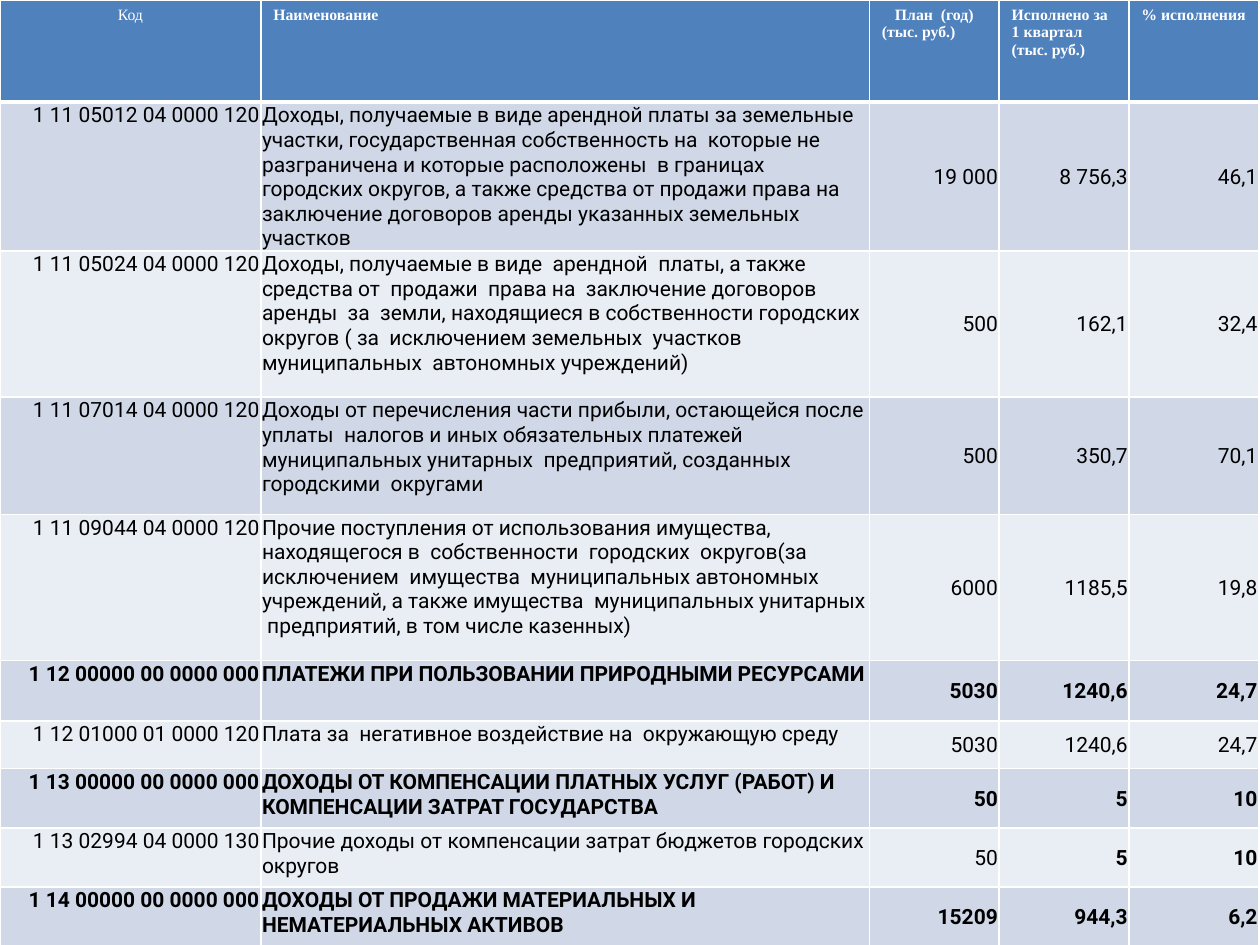
from dataclasses import dataclass

from lxml import etree
from pptx import Presentation
from pptx.dml.color import RGBColor
from pptx.enum.text import MSO_ANCHOR, PP_ALIGN
from pptx.oxml.ns import qn
from pptx.table import _Cell
from pptx.util import Inches, Pt

LEFT, CENTER, RIGHT = PP_ALIGN.LEFT, PP_ALIGN.CENTER, PP_ALIGN.RIGHT
TOP, MIDDLE = MSO_ANCHOR.TOP, MSO_ANCHOR.MIDDLE

WHITE = RGBColor(0xFF, 0xFF, 0xFF)
BLACK = RGBColor(0, 0, 0)
HEADER_BLUE = RGBColor(0x4F, 0x81, 0xBD)
BANDS = (RGBColor(0xD0, 0xD8, 0xE8), RGBColor(0xE9, 0xED, 0xF4))

SLIDE_WIDTH, SLIDE_HEIGHT = 10, 7.5
COLUMN_SHARES = (0.207, 0.483, 0.103, 0.103, 0.103)
HEADER_HEIGHT = 0.81
THIN, THICK = 1, 3


@dataclass(frozen=True)
class TextStyle:
    font: str
    size: float
    color: RGBColor
    bold: bool = False


@dataclass(frozen=True)
class Heading:
    lines: tuple[str, ...]
    alignments: tuple[PP_ALIGN, ...] = (LEFT,)
    bold: bool = True


@dataclass(frozen=True)
class Income:
    height: float
    code: str
    title: str
    plan: str
    actual: str
    percent: str
    bold: bool = False
    bold_result: bool = False


HEADINGS = (
    Heading(("Код",), (CENTER,), bold=False),
    Heading(("Наименование",)),
    Heading(("План  (год)", "(тыс. руб.)"), (CENTER, LEFT)),
    Heading(("Исполнено за 1 квартал (тыс. руб.)",)),
    Heading(("% исполнения",)),
)

INCOMES = (
    Income(1.16, "1 11 05012 04 0000 120",
           "Доходы, получаемые в виде арендной платы за земельные  участки, "
           "государственная собственность на  которые не разграничена и которые "
           "расположены  в границах городских округов, а также средства от продажи "
           "права на заключение договоров аренды указанных земельных участков",
           "19 000", "8 756,3", "46,1"),
    Income(1.16, "1 11 05024 04 0000 120",
           "Доходы, получаемые в виде  арендной  платы, а также  средства от  "
           "продажи  права на  заключение договоров аренды  за  земли, находящиеся "
           "в собственности городских  округов ( за  исключением земельных  "
           "участков муниципальных  автономных учреждений)",
           "500", "162,1", "32,4"),
    Income(0.93, "1 11 07014 04 0000 120",
           "Доходы от перечисления части прибыли, остающейся после уплаты  налогов "
           "и иных обязательных платежей муниципальных унитарных  предприятий, "
           "созданных городскими  округами",
           "500", "350,7", "70,1"),
    Income(1.16, "1 11 09044 04 0000 120",
           "Прочие поступления от использования имущества, находящегося в  "
           "собственности  городских  округов(за исключением  имущества  "
           "муниципальных автономных  учреждений, а также имущества  муниципальных "
           "унитарных  предприятий, в том числе казенных)",
           "6000", "1185,5", "19,8"),
    Income(0.48, "1 12 00000 00 0000 000",
           "ПЛАТЕЖИ ПРИ ПОЛЬЗОВАНИИ ПРИРОДНЫМИ РЕСУРСАМИ",
           "5030", "1240,6", "24,7", bold=True),
    Income(0.38, "1 12 01000 01 0000 120",
           "Плата за  негативное воздействие на  окружающую среду",
           "5030", "1240,6", "24,7"),
    Income(0.47, "1 13 00000 00 0000 000",
           "ДОХОДЫ ОТ КОМПЕНСАЦИИ ПЛАТНЫХ УСЛУГ (РАБОТ) И КОМПЕНСАЦИИ ЗАТРАТ "
           "ГОСУДАРСТВА",
           "50", "5", "10", bold=True),
    Income(0.47, "1 13 02994 04 0000 130",
           "Прочие доходы от компенсации затрат бюджетов городских округов",
           "50", "5", "10", bold_result=True),
    Income(0.47, "1 14 00000 00 0000 000",
           "ДОХОДЫ ОТ ПРОДАЖИ МАТЕРИАЛЬНЫХ И НЕМАТЕРИАЛЬНЫХ АКТИВОВ",
           "15209", "944,3", "6,2", bold=True),
)


def set_borders(cell: _Cell, top: float = THIN, bottom: float = THIN) -> None:
    """Put white lines on all four sides, ahead of the fill as the schema asks."""
    properties = cell._tc.get_or_add_tcPr()
    sides = (("a:lnL", THIN), ("a:lnR", THIN), ("a:lnT", top), ("a:lnB", bottom))
    for position, (tag, width) in enumerate(sides):
        line = etree.Element(qn(tag), w=str(Pt(width)))
        fill = etree.SubElement(line, qn("a:solidFill"))
        etree.SubElement(fill, qn("a:srgbClr"), val=str(WHITE))
        properties.insert(position, line)


def fill_cell(cell: _Cell, color: RGBColor) -> None:
    cell.fill.solid()
    cell.fill.fore_color.rgb = color


def write_lines(cell: _Cell, lines: tuple[str, ...],
                alignments: tuple[PP_ALIGN, ...], style: TextStyle) -> None:
    frame = cell.text_frame
    for index, (line, alignment) in enumerate(zip(lines, alignments)):
        paragraph = frame.add_paragraph() if index else frame.paragraphs[0]
        paragraph.alignment = alignment
        run = paragraph.add_run()
        run.text = line
        run.font.name = style.font
        run.font.size = Pt(style.size)
        run.font.bold = style.bold
        run.font.color.rgb = style.color


def draw_heading(cell: _Cell, heading: Heading) -> None:
    fill_cell(cell, HEADER_BLUE)
    set_borders(cell, bottom=THICK)
    style = TextStyle("Times New Roman", 9, WHITE, heading.bold)
    write_lines(cell, heading.lines, heading.alignments, style)


def draw_income(cells: list[_Cell], income: Income, band: RGBColor,
                top_border: float) -> None:
    result_bold = income.bold or income.bold_result
    columns = (
        (income.code, RIGHT, TOP, income.bold),
        (income.title, LEFT, TOP, income.bold),
        (income.plan, RIGHT, MIDDLE, income.bold),
        (income.actual, RIGHT, MIDDLE, result_bold),
        (income.percent, RIGHT, MIDDLE, result_bold),
    )
    for cell, (text, alignment, anchor, bold) in zip(cells, columns):
        cell.margin_left = cell.margin_top = cell.margin_right = Inches(0.01)
        cell.margin_bottom = 0
        cell.vertical_anchor = anchor
        fill_cell(cell, band)
        set_borders(cell, top=top_border)
        write_lines(cell, (text,), (alignment,),
                    TextStyle("Roboto", 12, BLACK, bold))


def main() -> None:
    presentation = Presentation()
    presentation.slide_width = Inches(SLIDE_WIDTH)
    presentation.slide_height = Inches(SLIDE_HEIGHT)
    slide = presentation.slides.add_slide(presentation.slide_layouts[6])

    table = slide.shapes.add_table(
        len(INCOMES) + 1, len(HEADINGS), 0, 0,
        presentation.slide_width, presentation.slide_height).table
    for column, share in zip(table.columns, COLUMN_SHARES):
        column.width = Inches(share * SLIDE_WIDTH)

    table.rows[0].height = Inches(HEADER_HEIGHT)
    for cell, heading in zip(table.rows[0].cells, HEADINGS):
        draw_heading(cell, heading)

    for index, income in enumerate(INCOMES):
        row = table.rows[index + 1]
        row.height = Inches(income.height)
        draw_income(list(row.cells), income, BANDS[index % len(BANDS)],
                    THIN if index else THICK)

    presentation.save("out.pptx")


if __name__ == "__main__":
    main()
